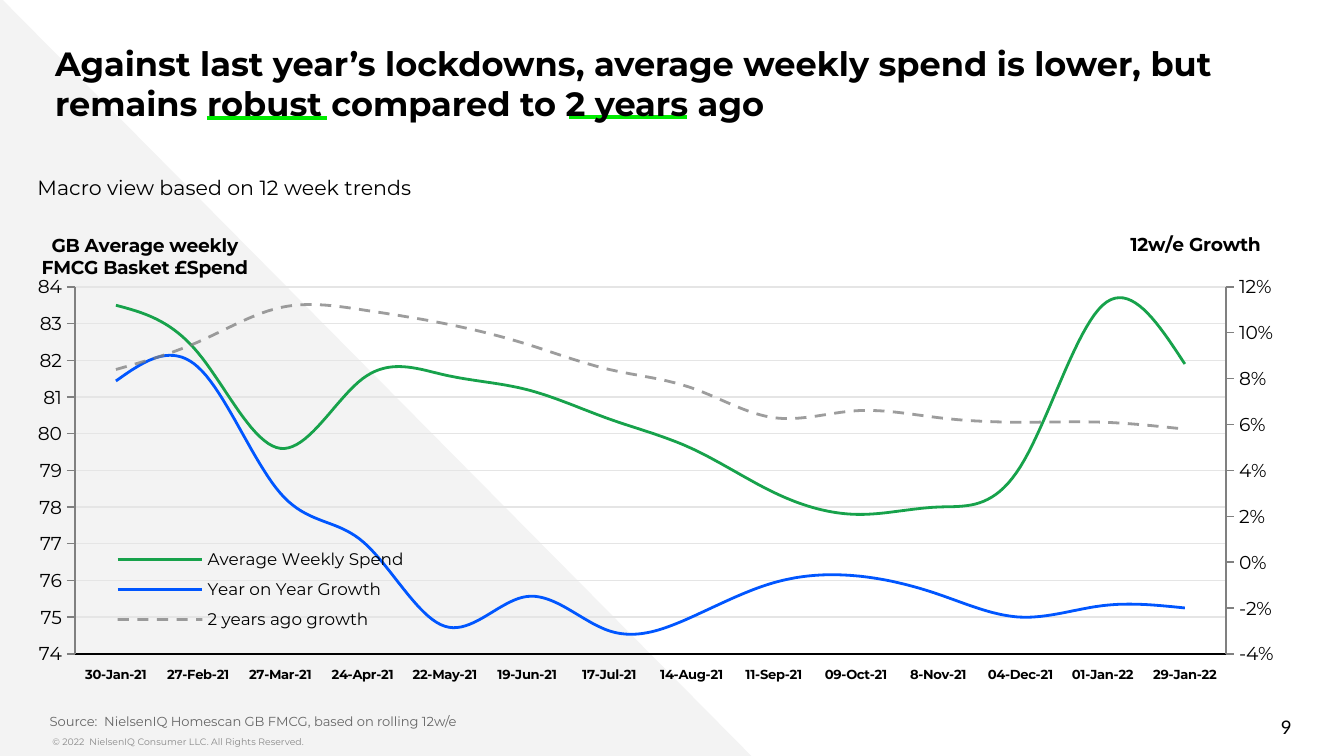
from copy import deepcopy

from lxml import etree
from pptx import Presentation
from pptx import util as u
from pptx.chart.axis import ValueAxis
from pptx.chart.data import CategoryChartData
from pptx.dml.color import RGBColor
from pptx.enum import chart as charts, dml, shapes, text
from pptx.oxml.ns import qn

FONT = "Montserrat"
DATES = ["30-Jan-21", "27-Feb-21", "27-Mar-21", "24-Apr-21", "22-May-21",
         "19-Jun-21", "17-Jul-21", "14-Aug-21", "11-Sep-21", "09-Oct-21",
         "8-Nov-21", "04-Dec-21", "01-Jan-22", "29-Jan-22"]
SPEND = [83.5, 82.2, 79.6, 81.5, 81.6, 81.2, 80.4, 79.6, 78.4, 77.8, 78.0,
         79.1, 83.5, 81.9]
YEAR_GROWTH = [0.079, 0.085, 0.03, 0.009, -0.028, -0.015, -0.03, -0.024,
               -0.009, -0.006, -0.014, -0.024, -0.019, -0.02]
TWO_YEAR_GROWTH = [0.084, 0.096, 0.111, 0.11, 0.104, 0.095, 0.084, 0.076,
                   0.063, 0.066, 0.063, 0.061, 0.061, 0.058]
SERIES = [("Average Weekly Spend", SPEND, "17A24B"),
          ("Year on Year Growth", YEAR_GROWTH, "0056FF"),
          ("2 years ago growth", TWO_YEAR_GROWTH, "808080")]


def colour(value):
    return RGBColor.from_string(value)


def style_font(font, size, value="000000", bold=False, name=FONT):
    font.name, font.size, font.bold = name, u.Pt(size), bold
    font.color.rgb = colour(value)


def style_line(line, value, width):
    line.color.rgb = colour(value)
    line.width = u.Pt(width)


def place(shape, left, top, width, height):
    shape.left, shape.top = u.Pt(left), u.Pt(top)
    shape.width, shape.height = u.Pt(width), u.Pt(height)


def write(shape, words, size, value="000000", bold=False, name=FONT,
          insets=(0, 3.6), align=text.PP_ALIGN.LEFT,
          anchor=text.MSO_ANCHOR.TOP):
    frame = shape.text_frame
    frame.word_wrap = True
    frame.auto_size = text.MSO_AUTO_SIZE.NONE
    frame.vertical_anchor = anchor
    frame.margin_left = frame.margin_right = u.Pt(insets[0])
    frame.margin_top = frame.margin_bottom = u.Pt(insets[1])
    para = frame.paragraphs[0]
    para.alignment = align
    para.space_before = u.Pt(0)
    span = para.add_run()
    span.text = words
    style_font(span.font, size, value, bold, name)
    return para


def add_text(page, area, words, size, **options):
    box = page.shapes.add_textbox(*[u.Pt(n) for n in area])
    write(box, words, size, **options)


def add_underline(page, left, right, top):
    line = page.shapes.add_connector(
        shapes.MSO_CONNECTOR.STRAIGHT,
        u.Pt(left), u.Pt(top), u.Pt(right), u.Pt(top))
    style_line(line.line, "00EB00", 2.25)
    etree.SubElement(line._element.spPr, qn("a:effectLst"))
    return line


def send_to_back(page, shape):
    page.shapes._spTree.insert(2, shape._element)


def add_triangle(page):
    triangle = page.shapes.add_shape(
        shapes.MSO_SHAPE.RIGHT_TRIANGLE,
        u.Pt(0), u.Pt(-1.5), u.Pt(402.5), u.Pt(406.5))
    triangle.shadow.inherit = False
    triangle.fill.solid()
    triangle.fill.fore_color.rgb = colour("F3F3F3")
    triangle.line.fill.background()
    send_to_back(page, triangle)


def set_layout(parent, index, **fractions):
    """Place a chart part by fractions of the chart area."""
    for old in parent.findall(qn("c:layout")):
        parent.remove(old)
    layout = etree.Element(qn("c:layout"))
    manual = etree.SubElement(layout, qn("c:manualLayout"))
    if "plotArea" in parent.tag:
        etree.SubElement(manual, qn("c:layoutTarget")).set("val", "inner")
    for key in ("xMode", "yMode"):
        etree.SubElement(manual, qn("c:" + key)).set("val", "edge")
    for key, value in fractions.items():
        etree.SubElement(manual, qn("c:" + key)).set("val", str(value))
    parent.insert(index, layout)


def format_value_axis(axis, low, high, step, number_format, title, left):
    axis.minimum_scale, axis.maximum_scale = low, high
    axis.major_unit = step
    axis.major_tick_mark = charts.XL_TICK_MARK.OUTSIDE
    axis.tick_labels.number_format = number_format
    axis.tick_labels.number_format_is_linked = False
    style_font(axis.tick_labels.font, 10)
    style_line(axis.format.line, "808080", 0.75)
    # Horizontal title above the axis
    frame = axis.axis_title.text_frame
    frame.text = title
    for para in frame.paragraphs:
        para.alignment = text.PP_ALIGN.CENTER
        for span in para.runs:
            style_font(span.font, 10, bold=True)
    body = frame._txBody.find(qn("a:bodyPr"))
    body.set("rot", "0")
    body.set("vert", "horz")
    set_layout(axis.axis_title._element, 1, x=left, y=0.02)


def add_right_axis(chart):
    """Move the growth series to a second pair of axes."""
    area = chart._chartSpace.chart.plotArea
    spend_plot = area.find(qn("c:lineChart"))
    growth_plot = deepcopy(spend_plot)
    spend_plot.addnext(growth_plot)
    for series in spend_plot.findall(qn("c:ser"))[1:]:
        spend_plot.remove(series)
    growth_plot.remove(growth_plot.find(qn("c:ser")))
    dates, values = area.find(qn("c:catAx")), area.find(qn("c:valAx"))
    new_dates, new_values = deepcopy(dates), deepcopy(values)
    values.addnext(new_values)
    new_values.addnext(new_dates)
    date_id, value_id = "5001", "5002"
    for axis, own, other in ((new_dates, date_id, value_id),
                             (new_values, value_id, date_id)):
        axis.find(qn("c:axId")).set("val", own)
        axis.find(qn("c:crossAx")).set("val", other)
    for node, number in zip(growth_plot.findall(qn("c:axId")),
                            (date_id, value_id)):
        node.set("val", number)
    new_values.find(qn("c:axPos")).set("val", "r")
    new_values.find(qn("c:crosses")).set("val", "max")
    right = ValueAxis(new_values)
    right.has_major_gridlines = False
    ValueAxis(new_dates).visible = False
    return right


def add_trend_chart(page):
    data = CategoryChartData()
    data.categories = DATES
    for name, values, _ in SERIES:
        data.add_series(name, values)
    chart = page.shapes.add_chart(
        charts.XL_CHART_TYPE.LINE, u.Pt(20.2), u.Pt(116.6), u.Pt(663.1),
        u.Pt(265.7), data).chart
    chart.has_title = False
    style_font(chart.font, 10, name="Arial")
    # Lines
    for series, (_, _, value) in zip(chart.plots[0].series, SERIES):
        series.smooth = True
        style_line(series.format.line, value, 1.5)
    dashed = series.format.line
    dashed.dash_style = dml.MSO_LINE.DASH
    tint = series._element.spPr.find(".//" + qn("a:srgbClr"))
    etree.SubElement(tint, qn("a:alpha")).set("val", "76000")
    # Axes
    dates = chart.category_axis
    dates.major_tick_mark = charts.XL_TICK_MARK.NONE
    dates.tick_label_position = charts.XL_TICK_LABEL_POSITION.LOW
    style_font(dates.tick_labels.font, 7, bold=True)
    style_line(dates.format.line, "000000", 0.75)
    left = chart.value_axis
    style_line(left.major_gridlines.format.line, "E5E5E5", 0.75)
    right = add_right_axis(chart)
    format_value_axis(left, 74, 84, 1, "0",
                      "GB Average weekly\nFMCG Basket £Spend", 0)
    format_value_axis(right, -0.04, 0.12, 0.02, "0%", "12w/e Growth", 0.88)
    # Legend inside the plot, wide enough for one line per growth series
    chart.has_legend = True
    legend = chart.legend
    legend.position = charts.XL_LEGEND_POSITION.LEFT
    legend.include_in_layout = False
    style_font(legend.font, 9)
    set_layout(legend._element, 1, x=0.05, y=0.65, w=0.26, h=0.2)
    set_layout(chart._chartSpace.chart.plotArea, 0,
               x=0.03, y=0.14, w=0.93, h=0.74)


def main():
    deck = Presentation()
    deck.slide_width, deck.slide_height = u.Pt(720), u.Pt(405)
    page = deck.slides.add_slide(deck.slide_layouts[0])
    # Title and source line
    title, source = page.placeholders
    place(title, 29.5, 15.8, 690.5, 51.8)
    write(title, "Against last year’s lockdowns, average weekly spend is "
          "lower, but remains robust compared to 2 years ago", 18,
          bold=True, insets=(0, 7.2))
    place(source, 15.1, 375.1, 642.2, 14.4)
    para = write(source, "Source:  NielsenIQ Homescan GB FMCG, based on "
                 "rolling 12w/e", 7, value="666666", insets=(0, 7.2))
    para._p.get_or_add_pPr().set("marL", str(u.Pt(11.5)))
    # Chart and its heading
    add_trend_chart(page)
    add_text(page, (13, 90, 360, 20.9),
             "Macro view based on 12 week trends", 11, insets=(7.2, 3.6))
    # Footer
    add_text(page, (28.1, 391, 398.9, 14.4),
             "© 2022  NielsenIQ Consumer LLC. All Rights Reserved.", 5,
             value="888888")
    add_text(page, (529.9, 378.7, 162, 21.6), "9", 10, name="Lato",
             align=text.PP_ALIGN.RIGHT, anchor=text.MSO_ANCHOR.MIDDLE)
    # Green underlines and background
    add_underline(page, 110.9, 175, 63.4)
    send_to_back(page, add_underline(page, 304.6, 367.9, 62.6))
    add_triangle(page)
    deck.save("out.pptx")


if __name__ == "__main__":
    main()
